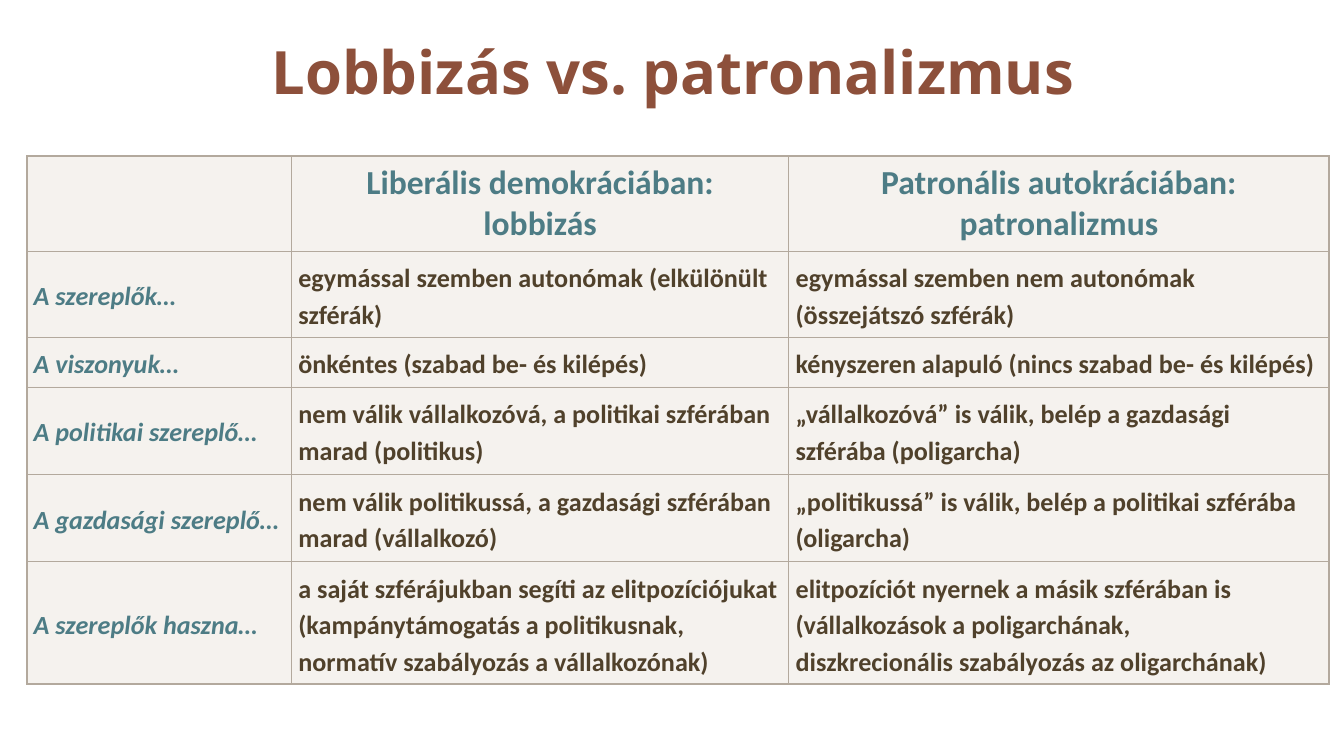
from copy import deepcopy

from lxml.etree import SubElement
from pptx import Presentation
from pptx.dml.color import RGBColor
from pptx.enum.text import MSO_ANCHOR, PP_ALIGN
from pptx.oxml import parse_xml
from pptx.oxml.ns import nsdecls, qn
from pptx.util import Inches, Pt

COLORS = {
    "title": "8D503B",
    "label": "4D7C85",
    "body": "50412B",
    "fill": "EFEAE4",
    "border": "B3A99D",
}
COLUMN_WIDTHS = [1.97, 3.7, 4.02]
ROW_HEIGHTS = [0.71, 0.64, 0.37, 0.65, 0.65, 0.91]
ROWS = [
    ["", "Liberális demokráciában:\nlobbizás", "Patronális autokráciában:\npatronalizmus"],
    ["A szereplők…",
     "egymással szemben autonómak (elkülönült szférák)",
     "egymással szemben nem autonómak\n(összejátszó szférák)"],
    ["A viszonyuk…",
     "önkéntes (szabad be- és kilépés)",
     "kényszeren alapuló (nincs szabad be- és kilépés)"],
    ["A politikai szereplő…",
     "nem válik vállalkozóvá, a politikai szférában marad (politikus)",
     "„vállalkozóvá” is válik, belép a gazdasági szférába (poligarcha)"],
    ["A gazdasági szereplő…",
     "nem válik politikussá, a gazdasági szférában marad (vállalkozó)",
     "„politikussá” is válik, belép a politikai szférába (oligarcha)"],
    ["A szereplők haszna…",
     "a saját szférájukban segíti az elitpozíciójukat (kampánytámogatás a politikusnak,\n"
     "normatív szabályozás a vállalkozónak)",
     "elitpozíciót nyernek a másik szférában is (vállalkozások a poligarchának,\n"
     "diszkrecionális szabályozás az oligarchának)"],
]


def write_text(paragraph, text, font_name, size, color, italic=False):
    """Fill a paragraph with bold text and give its line breaks the same format."""
    paragraph.text = text
    for run in paragraph.runs:
        run.font.name = font_name
        run.font.size = Pt(size)
        run.font.bold = True
        run.font.italic = italic
        run.font.color.rgb = RGBColor.from_string(COLORS[color])
    for line_break in paragraph._p.findall(qn("a:br")):
        line_break.append(deepcopy(paragraph.runs[0]._r.rPr))


def fill_cell(cell):
    """Give a cell the translucent table fill."""
    cell.fill.solid()
    cell.fill.fore_color.rgb = RGBColor.from_string(COLORS["fill"])
    color = cell._tc.tcPr.find(f"{qn('a:solidFill')}/{qn('a:srgbClr')}")
    SubElement(color, qn("a:alpha"), val="60000")


def border_cell(cell, outer_sides):
    """Draw the four cell borders, thicker on the outer edge of the table."""
    for index, side in enumerate("LRTB"):
        width = Pt(1 if side in outer_sides else 0.5)
        cell._tc.tcPr.insert(index, parse_xml(
            f'<a:ln{side} {nsdecls("a")} w="{width}"><a:solidFill>'
            f'<a:srgbClr val="{COLORS["border"]}"/></a:solidFill></a:ln{side}>'))


def add_title(slide, left, top, width, height):
    """Add the centred slide title."""
    shape = slide.shapes.add_textbox(Inches(left), Inches(top), Inches(width), Inches(height))
    text_frame = shape.text_frame
    text_frame.word_wrap = True
    text_frame.vertical_anchor = MSO_ANCHOR.MIDDLE
    paragraph = text_frame.paragraphs[0]
    paragraph.alignment = PP_ALIGN.CENTER
    write_text(paragraph, "Lobbizás vs. patronalizmus", "Open Sans", 32, "title")


def add_comparison_table(slide, left, top):
    """Add the table that compares lobbying with patronalism."""
    last_row, last_column = len(ROWS) - 1, len(COLUMN_WIDTHS) - 1
    table = slide.shapes.add_table(
        len(ROWS), len(COLUMN_WIDTHS), Inches(left), Inches(top),
        Inches(sum(COLUMN_WIDTHS)), Inches(sum(ROW_HEIGHTS))).table
    table.first_row = table.horz_banding = False
    for column, width in zip(table.columns, COLUMN_WIDTHS):
        column.width = Inches(width)
    for row, height in zip(table.rows, ROW_HEIGHTS):
        row.height = Inches(height)

    for row_index, texts in enumerate(ROWS):
        for column_index, text in enumerate(texts):
            cell = table.cell(row_index, column_index)
            cell.vertical_anchor = MSO_ANCHOR.MIDDLE
            cell.margin_left = cell.margin_right = Inches(0.05)
            cell.margin_top = cell.margin_bottom = Inches(0.05)
            fill_cell(cell)
            edges = {"L": column_index == 0, "R": column_index == last_column,
                     "T": row_index == 0, "B": row_index == last_row}
            border_cell(cell, [side for side, outer in edges.items() if outer])
            paragraph = cell.text_frame.paragraphs[0]
            if row_index == 0:
                paragraph.alignment = PP_ALIGN.CENTER
                write_text(paragraph, text, "Calibri", 18, "label")
            else:
                is_label = column_index == 0
                paragraph.line_spacing = 1.15
                write_text(paragraph, text, "Calibri", 14,
                           "label" if is_label else "body", is_label)


def main():
    """Build and save the presentation."""
    presentation = Presentation()
    presentation.slide_width = Inches(10)
    presentation.slide_height = Inches(10 * 9 / 16)
    slide = presentation.slides.add_slide(presentation.slide_layouts[6])
    add_title(slide, 0.13, 0.21, 9.76, 0.63)
    add_comparison_table(slide, 0.2, 1.16)
    presentation.save("out.pptx")


if __name__ == "__main__":
    main()
